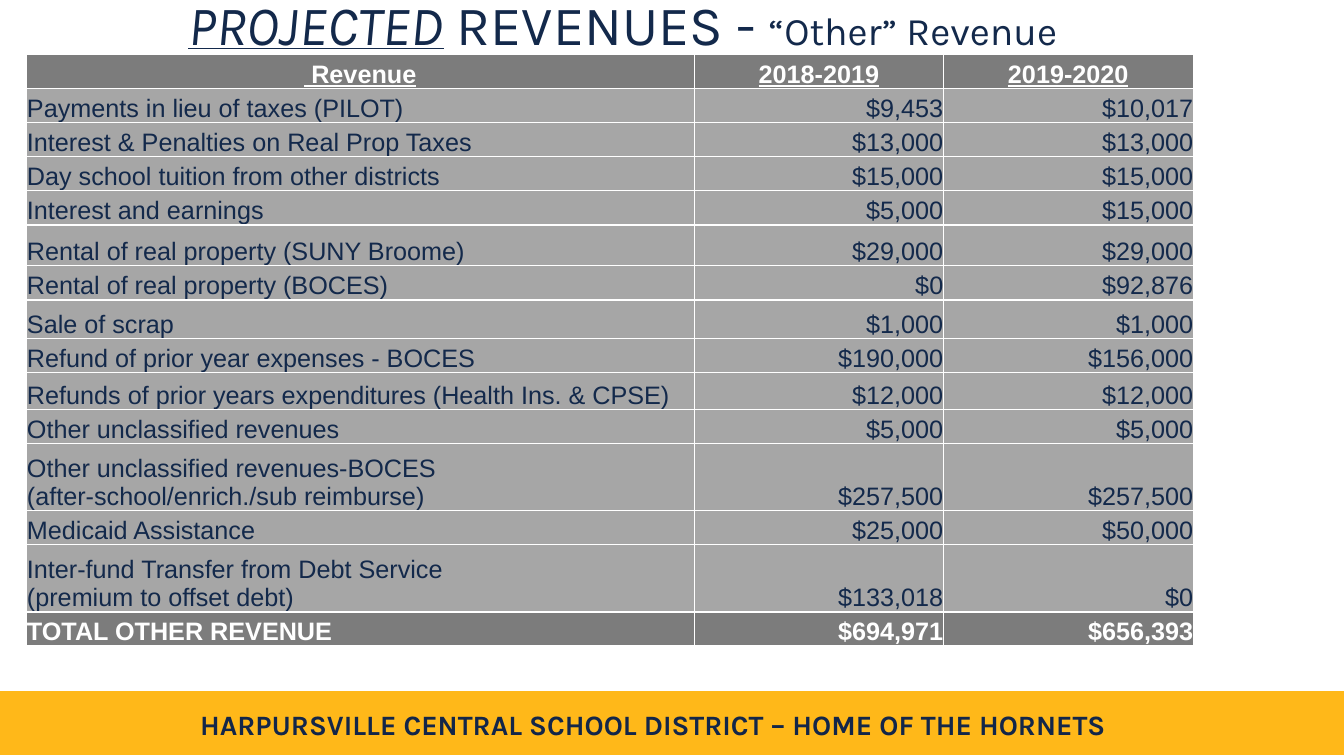
from lxml import etree
from pptx import Presentation
from pptx import util as u
from pptx.dml import color
from pptx.enum import shapes, text
from pptx.oxml import ns

HUES = {"navy": "13294B", "ink": "132649", "gold": "FFB819",
        "white": "FFFFFF", "dark": "7C7C7C", "gray": "A6A6A6"}
ALIGN = text.PP_ALIGN
COLS = [16.84, 6.27, 6.3]
ROW = 0.86
TALL = {5: 1.03, 7: 0.97, 9: 0.93, 11: 1.69, 13: 1.69}
DATA = [
    ("\u00a0Revenue".replace("\u00a0", " "), "2018-2019", "2019-2020"),
    ("Payments in lieu of taxes (PILOT)", "$9,453", "$10,017"),
    ("Interest & Penalties on Real Prop Taxes", "$13,000", "$13,000"),
    ("Day school tuition from other districts", "$15,000", "$15,000"),
    ("Interest and earnings", "$5,000", "$15,000"),
    ("Rental of real property (SUNY Broome)", "$29,000", "$29,000"),
    ("Rental of real property (BOCES)", "$0", "$92,876"),
    ("Sale of scrap", "$1,000", "$1,000"),
    ("Refund of prior year expenses - BOCES", "$190,000", "$156,000"),
    ("Refunds of prior years expenditures (Health Ins. & CPSE)", "$12,000", "$12,000"),
    ("Other unclassified revenues", "$5,000", "$5,000"),
    ("Other unclassified revenues-BOCES\v(after-school/enrich./sub reimburse)",
     "$257,500", "$257,500"),
    ("Medicaid Assistance", "$25,000", "$50,000"),
    ("Inter-fund Transfer from Debt Service\n(premium to offset debt)", "$133,018", "$0"),
    ("TOTAL OTHER REVENUE", "$694,971", "$656,393"),
]


def rgb(name):
    """Return the colour of a named hue."""
    return color.RGBColor.from_string(HUES[name])


def style(font, hue, **form):
    """Set the hue and the format values of a font."""
    font.color.rgb = rgb(hue)
    for key, val in form.items():
        setattr(font, key, val)


def paint(fill, hue):
    """Fill with one solid hue."""
    fill.solid()
    fill.fore_color.rgb = rgb(hue)


def label(slide, box, runs):
    """Place one centred line of styled runs in a box."""
    area = slide.shapes.add_textbox(*map(u.Cm, box))
    frame = area.text_frame
    frame.word_wrap = True
    frame.vertical_anchor = text.MSO_ANCHOR.MIDDLE
    para = frame.paragraphs[0]
    para.alignment = ALIGN.CENTER
    for words, hue, form in runs:
        run = para.add_run()
        run.text = words
        style(run.font, hue, name="Karla", **form)
    return area


def title(slide, box):
    """Place the title line in its box."""
    big = {"size": u.Pt(39.6)}
    area = label(slide, box, [
        ("PROJECTED", "navy", {**big, "italic": True, "underline": True}),
        (" REVENUES - ", "navy", big),
        ("“Other” Revenue", "navy", {"size": u.Pt(27.9)})])
    paint(area.fill, "white")
    area.text_frame.paragraphs[0].line_spacing = 0.9


def footer(slide, box):
    """Place the gold bar with the district name."""
    left, top, wide, high = box
    bar = slide.shapes.add_shape(shapes.MSO_SHAPE.RECTANGLE, *map(u.Cm, box))
    bar.shadow.inherit = False
    paint(bar.fill, "gold")
    paint(bar.line.fill, "gold")
    bar.line.width = u.Pt(1)
    label(slide, (left + 4.47, top + 0.26, wide - 9.89, high - 0.48),
          [("HARPURSVILLE CENTRAL SCHOOL DISTRICT – HOME OF THE HORNETS", "ink",
            {"size": u.Pt(20), "bold": True})])


def border(cell):
    """Draw white lines on all sides of a cell."""
    props = cell._tc.get_or_add_tcPr()
    for spot, side in enumerate(("lnL", "lnR", "lnT", "lnB")):
        line = etree.Element(ns.qn("a:" + side), w=str(u.Pt(1)))
        fill = etree.SubElement(line, ns.qn("a:solidFill"))
        etree.SubElement(fill, ns.qn("a:srgbClr"), val=HUES["white"])
        props.insert(spot, line)


def entry(cell, words, align, head, strong):
    """Write and format one cell."""
    edge = u.Cm(0.02)
    form = {"margin_left": edge, "margin_right": edge, "margin_top": edge,
            "margin_bottom": 0, "vertical_anchor": text.MSO_ANCHOR.BOTTOM}
    if align == ALIGN.RIGHT:
        form.update(margin_left=0, margin_right=0, margin_top=0)
    for key, val in form.items():
        setattr(cell, key, val)
    paint(cell.fill, "dark" if strong else "gray")
    border(cell)
    cell.text_frame.text = words
    for para in cell.text_frame.paragraphs:
        para.alignment = align
        for run in para.runs:
            style(run.font, "white" if strong else "navy", name="Arial",
                  size=u.Pt(18), bold=strong, underline=head)


def ledger(slide, left, top):
    """Place the revenue table at a corner."""
    highs = [TALL.get(row, ROW) for row in range(len(DATA))]
    box = (left, top, sum(COLS), sum(highs))
    grid = slide.shapes.add_table(len(DATA), len(COLS), *map(u.Cm, box)).table
    grid.first_row = grid.horz_banding = False
    for col, wide in zip(grid.columns, COLS):
        col.width = u.Cm(wide)
    for row, high in enumerate(highs):
        grid.rows[row].height = u.Cm(high)
        head = row == 0
        strong = head or row == len(DATA) - 1
        for col, words in enumerate(DATA[row]):
            side = ALIGN.RIGHT if col else ALIGN.LEFT
            entry(grid.cell(row, col), words, ALIGN.CENTER if head else side,
                  head, strong)


def main():
    """Build and save the slide."""
    deck = Presentation()
    deck.slide_width, deck.slide_height = u.Cm(33.87), u.Cm(19.05)
    slide = deck.slides.add_slide(deck.slide_layouts[6])
    footer(slide, (0, 17.42, 33.87, 1.6))
    title(slide, (2.18, 0, 27.03, 1.37))
    ledger(slide, 0.66, 1.37)
    deck.save("out.pptx")


if __name__ == "__main__":
    main()
